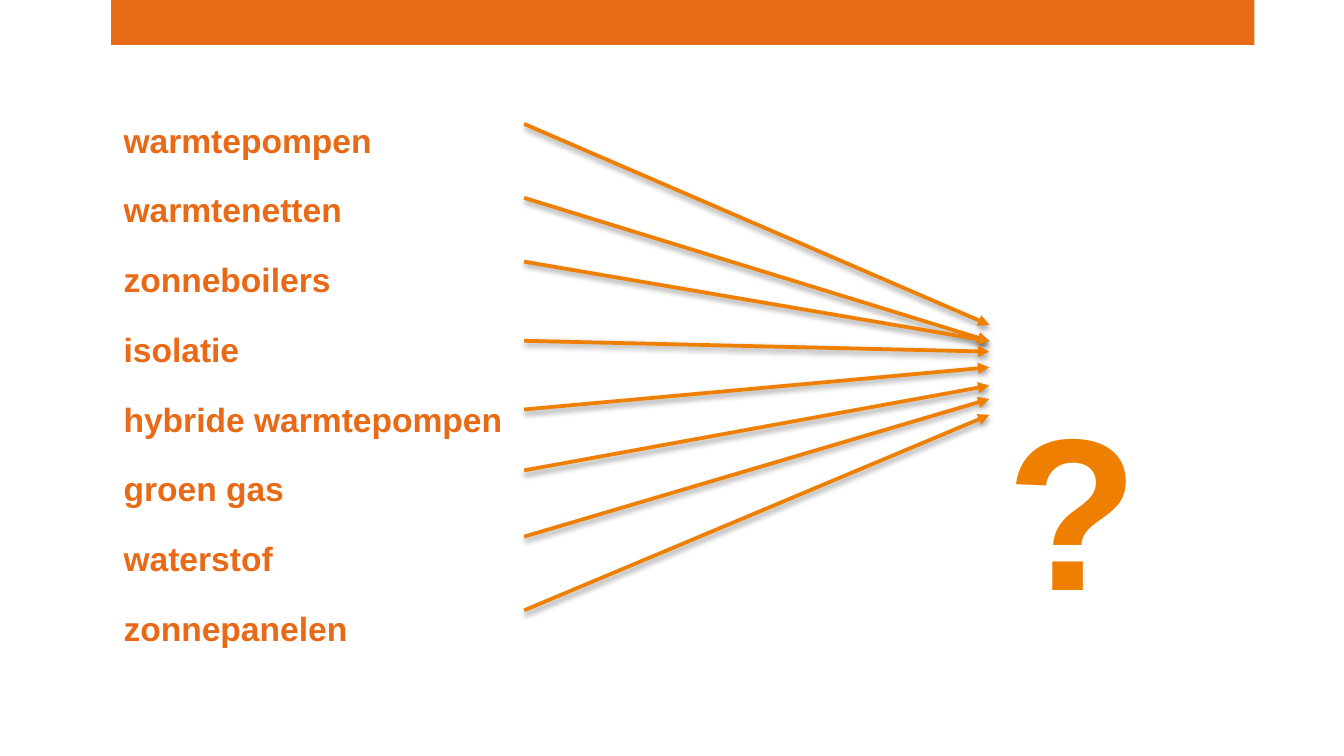
from dataclasses import dataclass

from lxml import etree
from pptx import Presentation
from pptx import util as u
from pptx.dml.color import RGBColor
from pptx.enum import shapes, text
from pptx.oxml import parse_xml
from pptx.oxml.ns import nsdecls, qn

Pt = u.Pt


@dataclass(frozen=True)
class Theme:
    """Colours, font and type sizes of the slide."""
    band: RGBColor = RGBColor(0xE7, 0x6A, 0x17)
    body: RGBColor = RGBColor(0xE8, 0x6A, 0x16)
    accent: RGBColor = RGBColor(0xEE, 0x7F, 0x00)
    font: str = "Arial"
    body_size: int = 18
    mark_size: int = 200


THEME = Theme()
OPTIONS = ["warmtepompen", "warmtenetten", "zonneboilers", "isolatie",
           "hybride warmtepompen", "groen gas", "waterstof", "zonnepanelen"]
ARROW_STARTS = [66.4, 106, 140.2, 182.6, 219.4, 252, 287.5, 327]
ARROW_ENDS = [174.1, 182.8, 182.8, 188.4, 196.8, 206.6, 213.8, 222.3]
SHADOW = f"""<a:effectLst {nsdecls('a')}>
  <a:outerShdw blurRad="40000" dist="20000" dir="5400000" rotWithShape="0">
    <a:srgbClr val="000000"><a:alpha val="38000"/></a:srgbClr>
  </a:outerShdw>
</a:effectLst>"""


def add_run(p, words, size, color):
    """Add a bold run in the theme font and return it."""
    r = p.add_run()
    r.text = words
    r.font.name = THEME.font
    r.font.size = Pt(size)
    r.font.bold = True
    r.font.color.rgb = color
    return r


def add_band(s, x, y, w, h):
    """Draw the coloured band at the top edge."""
    sp = s.shapes.add_shape(shapes.MSO_SHAPE.RECTANGLE, Pt(x), Pt(y), Pt(w), Pt(h))
    sp.shadow.inherit = False
    sp.fill.solid()
    sp.fill.fore_color.rgb = THEME.band
    sp.line.fill.background()


def fill_options(sp, x, y, w, h):
    """Place the body placeholder and list the options in it."""
    sp.left, sp.top, sp.width, sp.height = Pt(x), Pt(y), Pt(w), Pt(h)
    tf = sp.text_frame
    tf.auto_size = text.MSO_AUTO_SIZE.NONE
    tf.vertical_anchor = text.MSO_ANCHOR.TOP
    for i, option in enumerate(OPTIONS):
        p = tf.add_paragraph() if i else tf.paragraphs[0]
        pPr = p._p.get_or_add_pPr()
        pPr.set("marL", "0")
        pPr.set("indent", "0")
        etree.SubElement(pPr, qn("a:buNone"))
        p.line_spacing = 1.5
        p.space_before = Pt(4.95 if i else 0)
        add_run(p, option, THEME.body_size, THEME.body)


def add_arrows(s, x, w):
    """Draw the arrows that converge from the options to the question mark."""
    for start, end in zip(ARROW_STARTS, ARROW_ENDS):
        arrow = s.shapes.add_connector(shapes.MSO_CONNECTOR.STRAIGHT,
                                       Pt(x), Pt(start), Pt(x + w), Pt(end))
        arrow.line.color.rgb = THEME.accent
        arrow.line.width = Pt(2)
        etree.SubElement(arrow.line._get_or_add_ln(), qn("a:tailEnd"), type="triangle")
        arrow._element.spPr.append(parse_xml(SHADOW))


def add_question_mark(s, x, y, w, h):
    """Add the large lowered question mark."""
    tf = s.shapes.add_textbox(Pt(x), Pt(y), Pt(w), Pt(h)).text_frame
    tf.word_wrap = True
    tf.auto_size = text.MSO_AUTO_SIZE.SHAPE_TO_FIT_TEXT
    r = add_run(tf.paragraphs[0], "?", THEME.mark_size, THEME.accent)
    r._r.get_or_add_rPr().set("baseline", "-25000")


def main():
    """Build and save the slide."""
    prs = Presentation()
    prs.slide_width, prs.slide_height = Pt(720), Pt(405)
    s = prs.slides.add_slide(prs.slide_layouts[1])
    title = s.shapes.title._element
    title.getparent().remove(title)
    add_band(s, 59.5, 0, 612.5, 24)
    fill_options(s.placeholders[1], 59, 49.7, 618.5, 314.6)
    add_arrows(s, 280.8, 249.2)
    add_question_mark(s, 532, 62.6, 130.3, 168.5)
    prs.save("out.pptx")


if __name__ == "__main__":
    main()
